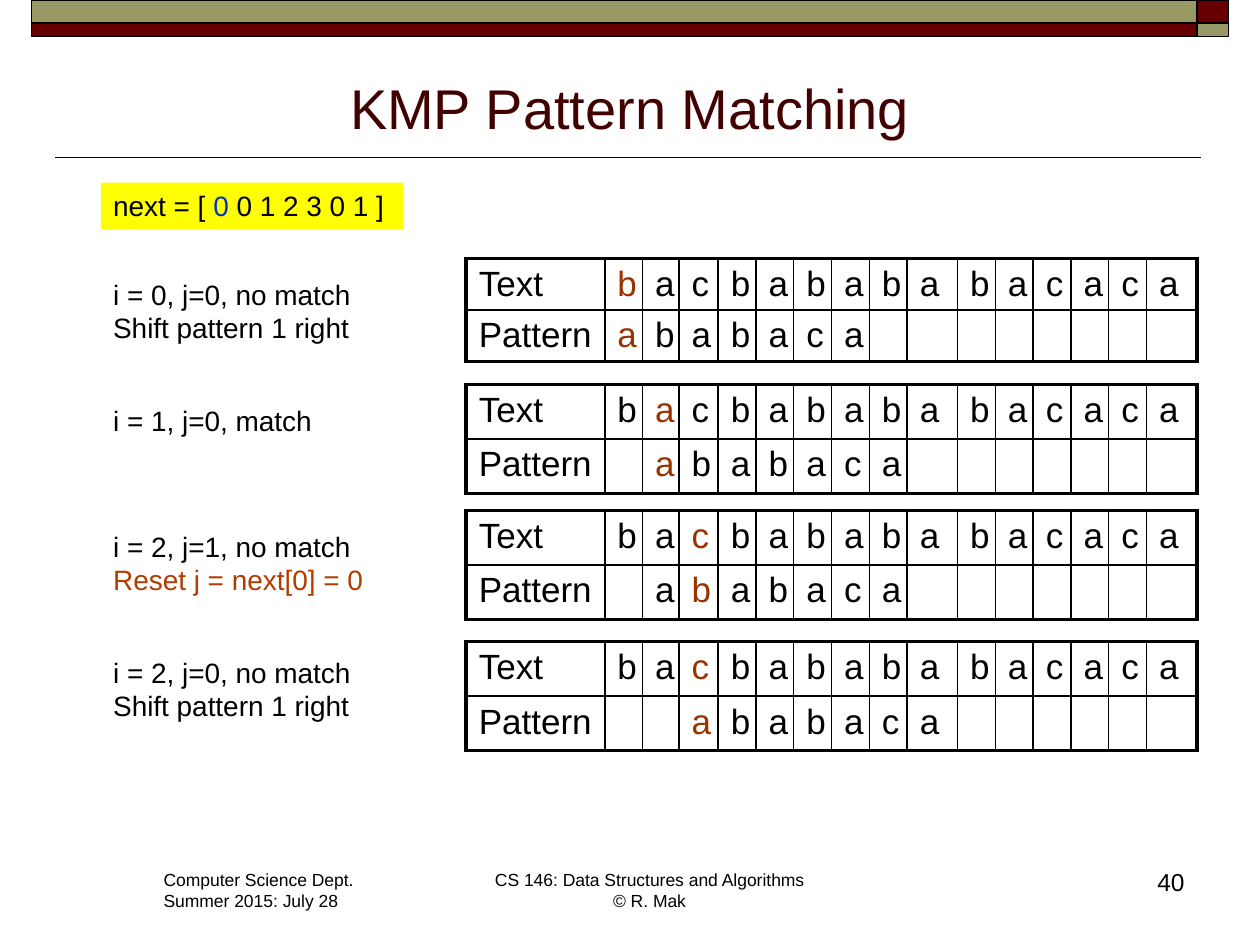
from pptx import Presentation
from pptx.dml.color import RGBColor
from pptx.enum.shapes import MSO_CONNECTOR, MSO_SHAPE
from pptx.enum.text import MSO_ANCHOR, MSO_AUTO_SIZE, PP_ALIGN
from pptx.oxml import parse_xml
from pptx.oxml.ns import nsdecls
from pptx.util import Inches, Pt

LEFT, CENTER, RIGHT = PP_ALIGN.LEFT, PP_ALIGN.CENTER, PP_ALIGN.RIGHT
TOP, BOTTOM = MSO_ANCHOR.TOP, MSO_ANCHOR.BOTTOM
GROW, FIXED = MSO_AUTO_SIZE.SHAPE_TO_FIT_TEXT, MSO_AUTO_SIZE.NONE
RECTANGLE, STRAIGHT = MSO_SHAPE.RECTANGLE, MSO_CONNECTOR.STRAIGHT

BLACK, YELLOW, BLUE = "000000", "FFFF00", "0033CC"
MAROON, OLIVE, TITLE_COLOR = "660000", "999966", "420000"
RUST, ORANGE = "993300", "B23C00"

LETTERS = "bacbabababacaca"
PATTERN = "ababaca"
COLUMN_WIDTHS = [11, 3, 2.9, 3.1] + [3] * 5 + [4] + [3] * 5 + [4]
ROW_HEIGHT = 4.1


def color(value):
    """Return the colour for a hex string."""
    return RGBColor.from_string(value)


def set_values(target, values):
    """Set each attribute named in a dict of format values."""
    for name, value in values.items():
        setattr(target, name, value)


class SlideBuilder:
    """Hold the style and current slide; the grid has 100 columns and 75 rows."""

    font_name = "Arial"
    thin, thick = 1, 2.25

    def __init__(self, presentation):
        """Add a title-only slide to the presentation."""
        self.width = presentation.slide_width
        self.height = presentation.slide_height
        self.slide = presentation.slides.add_slide(presentation.slide_layouts[5])
        self.shapes = self.slide.shapes

    def grid(self, column, row):
        """Convert a column and a row of the grid to lengths."""
        return round(self.width * column / 100), round(self.height * row / 75)

    def area(self, left, top, width, height):
        """Convert a grid area to position and size."""
        return self.grid(left, top) + self.grid(width, height)

    def fill_text(self, frame, paragraphs, size, align=LEFT, **frame_values):
        """Fill a text frame with paragraphs made of (text, colour) runs."""
        set_values(frame, frame_values)
        for index, runs in enumerate(paragraphs):
            paragraph = frame.add_paragraph() if index else frame.paragraphs[0]
            paragraph.alignment = align
            for text, run_color in runs:
                if text == "\n":
                    paragraph.add_line_break()
                    continue
                run = paragraph.add_run()
                run.text = text
                set_values(run.font, {"name": self.font_name, "size": Pt(size)})
                run.font.color.rgb = color(run_color)

    def title(self, text, *area):
        """Move, fill and format the title placeholder."""
        shape = self.shapes.title
        set_values(shape, dict(zip(("left", "top", "width", "height"), self.area(*area))))
        self.fill_text(shape.text_frame, [[(text, TITLE_COLOR)]], 32, CENTER,
                       vertical_anchor=BOTTOM, auto_size=FIXED)

    def text(self, paragraphs, size, *area, align=LEFT, wrap=False):
        """Add a text box."""
        shape = self.shapes.add_textbox(*self.area(*area))
        self.fill_text(shape.text_frame, paragraphs, size, align,
                       word_wrap=wrap, auto_size=FIXED if wrap else GROW)

    def rectangle(self, fill, *area, outline=None):
        """Add a filled rectangle and return it."""
        shape = self.shapes.add_shape(RECTANGLE, *self.area(*area))
        shape.shadow.inherit = False
        shape.fill.solid()
        shape.fill.fore_color.rgb = color(fill)
        if outline:
            shape.line.color.rgb = color(outline)
            shape.line.width = Pt(self.thin)
        else:
            shape.line.fill.background()
        return shape

    def rule(self, start, end, row):
        """Add a horizontal line between two columns."""
        line = self.shapes.add_connector(
            STRAIGHT, *self.grid(start, row), *self.grid(end, row))
        line.line.color.rgb = color(BLACK)
        line.line.width = Pt(self.thin)
        line._element.spPr.append(parse_xml(f"<a:effectLst {nsdecls('a')}/>"))

    def borders(self, cell, outer_sides):
        """Draw cell borders, thick on the outer sides."""
        properties = cell._tc.get_or_add_tcPr()
        for side in "LRTB":
            width = Pt(self.thick if side in outer_sides else self.thin)
            properties.append(parse_xml(
                f'<a:ln{side} {nsdecls("a")} w="{int(width)}"><a:solidFill>'
                f'<a:srgbClr val="{BLACK}"/></a:solidFill></a:ln{side}>'))

    def matching_table(self, left, top, shift, compared):
        """Add a text and pattern table with the compared letters coloured."""
        rows = [["Text", *LETTERS],
                ["Pattern", *(" " * shift + PATTERN).ljust(len(LETTERS))]]
        area = self.area(left, top, sum(COLUMN_WIDTHS), ROW_HEIGHT * len(rows))
        table = self.shapes.add_table(len(rows), len(COLUMN_WIDTHS), *area).table
        set_values(table, {"first_row": False, "horz_banding": False})
        for column, width in zip(table.columns, COLUMN_WIDTHS):
            column.width = self.grid(width, 0)[0]
        last = len(COLUMN_WIDTHS) - 1
        for row_index, values in enumerate(rows):
            table.rows[row_index].height = self.grid(0, ROW_HEIGHT)[1]
            for index, value in enumerate(values):
                cell = table.cell(row_index, index)
                outer = "TB"[row_index] + {0: "L", last: "R"}.get(index, "")
                self.borders(cell, outer)
                cell.fill.background()
                if value.strip():
                    run_color = RUST if index == compared + 1 else BLACK
                    self.fill_text(cell.text_frame, [[(value, run_color)]], 20)


def main():
    """Build and save the slide."""
    presentation = Presentation()
    set_values(presentation, {"slide_width": Inches(10), "slide_height": Inches(7.5)})
    builder = SlideBuilder(presentation)

    builder.rule(95.3, 4.4, 12.5)
    for top, height, fills in ((0, 1.8, (OLIVE, MAROON)), (1.8, 1.1, (MAROON, OLIVE))):
        for left, width, fill in zip((2.5, 95), (92.5, 2.5), fills):
            builder.rectangle(fill, left, top, width, height, outline=BLACK)

    builder.title("KMP Pattern Matching", 5, 4.5, 90, 7.2)

    shift_note = ("Shift pattern 1 right", BLACK)
    steps = [
        (20.5, 0, 0, 23.3, "i = 0, j=0, no match", shift_note),
        (30.5, 1, 1, 19.8, "i = 1, j=0, match", None),
        (40.5, 1, 2, 22.1, "i = 2, j=1, no match", ("Reset j = next[0] = 0", ORANGE)),
        (50.9, 2, 2, 23.8, "i = 2, j=0, no match", shift_note),
    ]
    for index, (top, shift, compared, width, state, note) in enumerate(steps):
        builder.matching_table(37, top, shift, compared)
        runs = [(state, BLACK)] + ([("\n", BLACK), note] if note else [])
        builder.text([runs], 16, 8, 21.5 + 10 * index, width, 6.4 if note else 3.7)

    array = builder.rectangle(YELLOW, 8, 14.5, 24, 3.7)
    builder.fill_text(array.text_frame,
                      [[("next = [ ", BLACK), ("0", BLUE), (" 0 1 2 3 0 1 ]", BLACK)]],
                      16, vertical_anchor=TOP, word_wrap=True, auto_size=GROW)

    builder.text([[("Computer Science Dept.", BLACK)], [("Summer 2015: July 28", BLACK)]],
                 10, 12, 68.5, 17.3, 4.4)
    builder.text([[("CS 146: Data Structures and Algorithms", BLACK),
                   ("\n", BLACK), ("© R. Mak", BLACK)]],
                 10, 38.2, 68.5, 26.7, 4.4, align=CENTER)
    builder.text([[("40", BLACK)]], 14, 74.2, 68.3, 20.8, 5, align=RIGHT, wrap=True)
    presentation.save("out.pptx")


if __name__ == "__main__":
    main()
